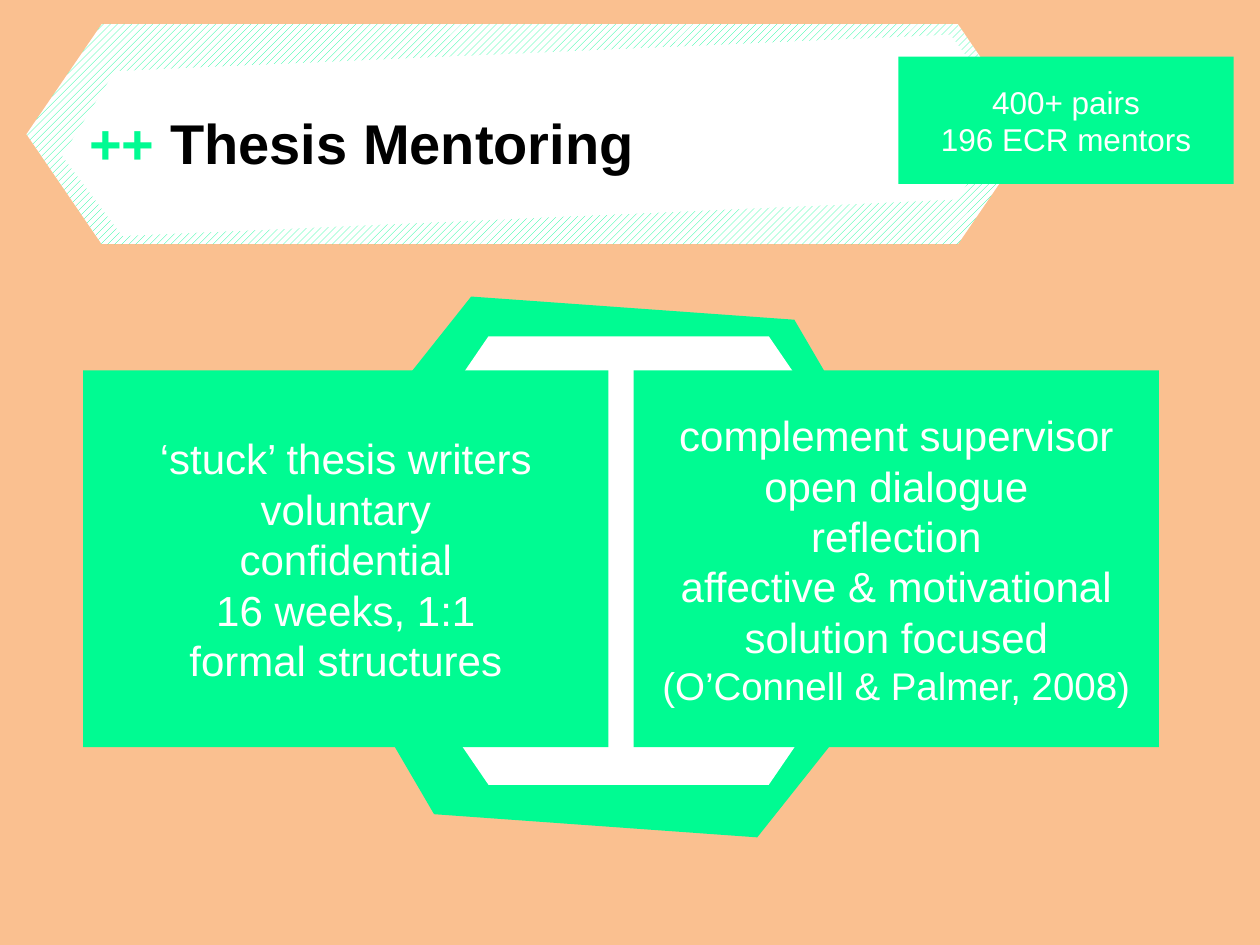
import pptx
import pptx.dml.color
import pptx.enum.dml
import pptx.enum.shapes
import pptx.enum.text
import pptx.util

Pt = pptx.util.Pt
SHAPES = pptx.enum.shapes.MSO_SHAPE
CENTER = pptx.enum.text.PP_ALIGN.CENTER
MIDDLE = pptx.enum.text.MSO_ANCHOR.MIDDLE

COLORS = {
    "background": "FAC090",
    "accent": "00FB92",
    "white": "FFFFFF",
    "black": "000000",
}

PANEL_TOP, PANEL_WIDTH, PANEL_HEIGHT = 211.7, 300.2, 215.3
PANEL_LEFT, PANEL_GAP = 47.5, 14.4
PANELS = [
    [("‘stuck’ thesis writers", 24), ("voluntary", 24), ("confidential", 24),
     ("16 weeks, 1:1", 24), ("formal structures", 24)],
    [("complement supervisor open dialogue", 24), ("reflection", 24),
     ("affective & motivational solution focused", 24),
     ("(O’Connell & Palmer, 2008)", 22)],
]


def color(name):
    return pptx.dml.color.RGBColor.from_string(COLORS[name])


def apply_format(target, values):
    for attribute, value in values.items():
        setattr(target, attribute, value)


def fill_solid(fill, name):
    fill.solid()
    fill.fore_color.rgb = color(name)


def fill_hatched(fill):
    fill.patterned()
    fill.pattern = pptx.enum.dml.MSO_PATTERN.WIDE_UPWARD_DIAGONAL
    fill.fore_color.rgb = color("accent")
    fill.back_color.rgb = color("white")


def add_plain_shape(slide, preset, box):
    """Add a preset shape with neither outline nor shadow."""
    shape = slide.shapes.add_shape(preset, *map(Pt, box))
    shape.shadow.inherit = False
    shape.line.fill.background()
    return shape


def add_hexagon(slide, box, rotation=0):
    hexagon = add_plain_shape(slide, SHAPES.HEXAGON, box)
    hexagon.adjustments[0] = 0.342
    hexagon.rotation = rotation
    return hexagon


def add_run(paragraph, text, size, color_name, bold=False):
    run = paragraph.add_run()
    run.text = text
    apply_format(run.font, {"name": "Arial", "size": Pt(size), "bold": bold})
    run.font.color.rgb = color(color_name)


def add_panel(slide, box, lines):
    """Add a green rectangle with centred (text, size) lines."""
    panel = add_plain_shape(slide, SHAPES.RECTANGLE, box)
    fill_solid(panel.fill, "accent")
    frame = panel.text_frame
    apply_format(frame, {"word_wrap": True, "vertical_anchor": MIDDLE})
    for index, (text, size) in enumerate(lines):
        paragraph = frame.add_paragraph() if index else frame.paragraphs[0]
        paragraph.alignment = CENTER
        add_run(paragraph, text, size, "white")


def add_title(slide, box):
    frame = slide.shapes.add_textbox(*map(Pt, box)).text_frame
    frame.word_wrap = True
    heading = frame.paragraphs[0]
    add_run(heading, "++", 32, "accent", bold=True)
    add_run(heading, " Thesis Mentoring", 32, "black", bold=True)


def main():
    deck = pptx.Presentation()
    apply_format(deck, {"slide_width": Pt(720), "slide_height": Pt(540)})
    slide = deck.slides.add_slide(deck.slide_layouts[6])
    fill_solid(slide.background.fill, "background")

    outer_ring = add_hexagon(slide, (157, 175.7, 388, 296.6), rotation=4.1)
    fill_solid(outer_ring.fill, "accent")
    ring_center = add_hexagon(slide, (191.5, 192.2, 335.5, 256.3))
    fill_solid(ring_center.fill, "white")

    for column, lines in enumerate(PANELS):
        left = PANEL_LEFT + column * (PANEL_WIDTH + PANEL_GAP)
        add_panel(slide, (left, PANEL_TOP, PANEL_WIDTH, PANEL_HEIGHT), lines)

    banner = add_hexagon(slide, (15.1, 13.7, 575.3, 126))
    fill_hatched(banner.fill)
    banner_center = add_hexagon(slide, (35.3, 30.2, 542.2, 94.3), rotation=357.5)
    fill_solid(banner_center.fill, "white")
    add_title(slide, (43.9, 58.3, 512.6, 46.1))
    add_panel(slide, (513.4, 32.4, 191.5, 72.7),
              [("400+ pairs", 18), ("196 ECR mentors", 18)])

    deck.save("out.pptx")


if __name__ == "__main__":
    main()
